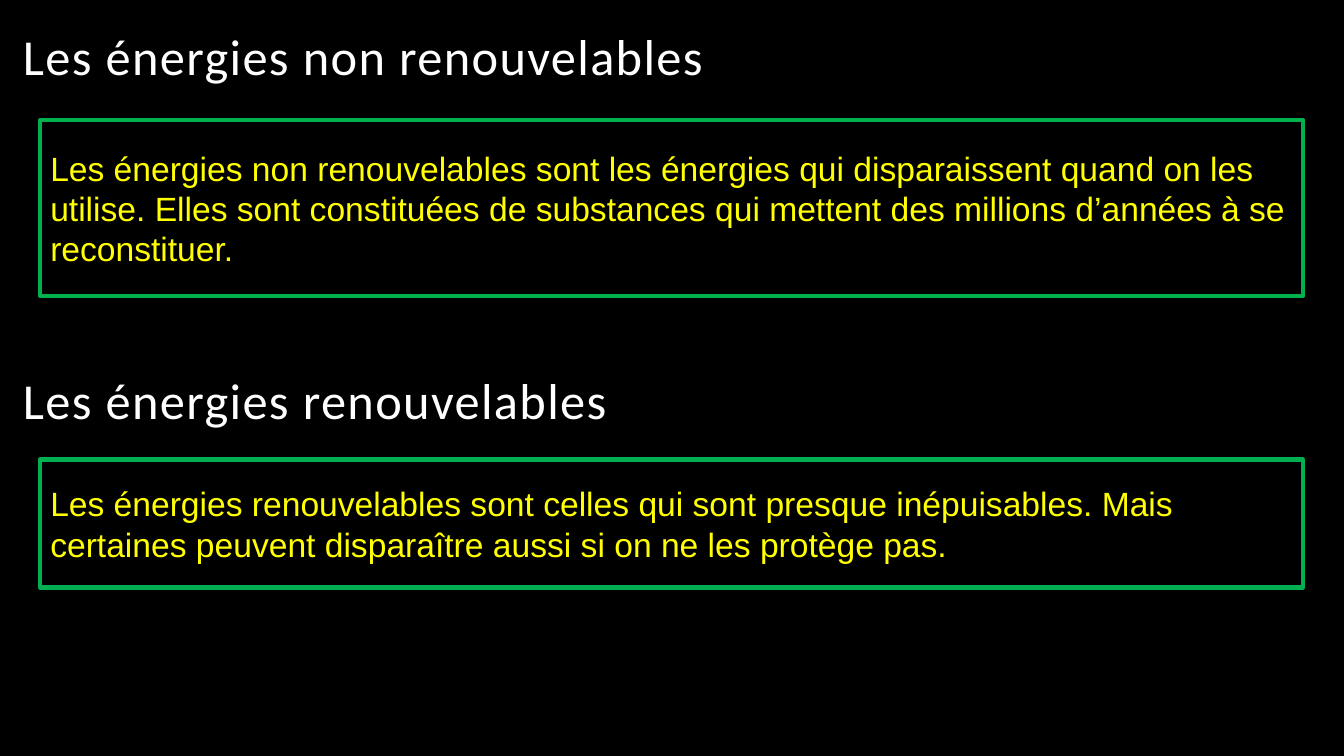
from dataclasses import dataclass

from pptx import Presentation
from pptx.dml.color import RGBColor
from pptx.enum.shapes import MSO_SHAPE
from pptx.enum.text import MSO_ANCHOR, PP_ALIGN
from pptx.slide import Slide
from pptx.text.text import TextFrame
from pptx.util import Emu, Pt

RECTANGLE = MSO_SHAPE.RECTANGLE
MIDDLE = MSO_ANCHOR.MIDDLE
BOTTOM = MSO_ANCHOR.BOTTOM
LEFT = PP_ALIGN.LEFT

BLACK = RGBColor(0x00, 0x00, 0x00)
WHITE = RGBColor(0xFF, 0xFF, 0xFF)
YELLOW = RGBColor(0xFF, 0xFF, 0x00)
GREEN = RGBColor(0x00, 0xB0, 0x50)

EMU_PER_PX = 9144  # 100 px to the inch
PAGE_WIDTH, PAGE_HEIGHT = 1333, 750
HEADING_LEFT, HEADING_WIDTH, HEADING_HEIGHT = 13, 1000, 81
DEFINITION_LEFT, DEFINITION_WIDTH = 40, 1252
LETTER_SPACING = "100"  # hundredths of a point


@dataclass(frozen=True)
class Section:
    heading: str
    heading_top: int
    definition: str
    definition_top: int
    definition_height: int


SECTIONS = [
    Section(
        "Les énergies non renouvelables", 10,
        "Les énergies non renouvelables sont les énergies qui disparaissent "
        "quand on les utilise. Elles sont constituées de substances qui "
        "mettent des millions d’années à se reconstituer.",
        119, 175,
    ),
    Section(
        "Les énergies renouvelables", 351,
        "Les énergies renouvelables sont celles qui sont presque "
        "inépuisables. Mais certaines peuvent disparaître aussi si on ne les "
        "protège pas.",
        456, 127,
    ),
]


def px(length: int) -> Emu:
    return Emu(length * EMU_PER_PX)


def write_text(frame: TextFrame, text: str, anchor: MSO_ANCHOR,
               font_name: str, size: int, color: RGBColor) -> None:
    frame.word_wrap = True
    frame.vertical_anchor = anchor
    para = frame.paragraphs[0]
    para.text = text
    para.alignment = LEFT
    para.font.name = font_name
    para.font.size = Pt(size)
    para.font.color.rgb = color


def add_heading(page: Slide, section: Section) -> None:
    box = page.shapes.add_textbox(
        px(HEADING_LEFT), px(section.heading_top),
        px(HEADING_WIDTH), px(HEADING_HEIGHT))
    write_text(box.text_frame, section.heading, BOTTOM, "Calibri", 36, WHITE)
    para = box.text_frame.paragraphs[0]
    para.line_spacing = 0.9
    para.runs[0]._r.get_or_add_rPr().set("spc", LETTER_SPACING)


def add_definition(page: Slide, section: Section) -> None:
    box = page.shapes.add_shape(
        RECTANGLE, px(DEFINITION_LEFT), px(section.definition_top),
        px(DEFINITION_WIDTH), px(section.definition_height))
    box.shadow.inherit = False
    box.fill.background()
    box.line.color.rgb = GREEN
    box.line.width = Pt(3)
    write_text(box.text_frame, section.definition, MIDDLE, "Arial", 24, YELLOW)


def main() -> None:
    deck = Presentation()
    deck.slide_width, deck.slide_height = px(PAGE_WIDTH), px(PAGE_HEIGHT)
    page = deck.slides.add_slide(deck.slide_layouts[6])

    # Black background
    page.background.fill.solid()
    page.background.fill.fore_color.rgb = BLACK

    # Each heading with its framed definition
    for section in SECTIONS:
        add_heading(page, section)
        add_definition(page, section)

    deck.save("out.pptx")


if __name__ == "__main__":
    main()
